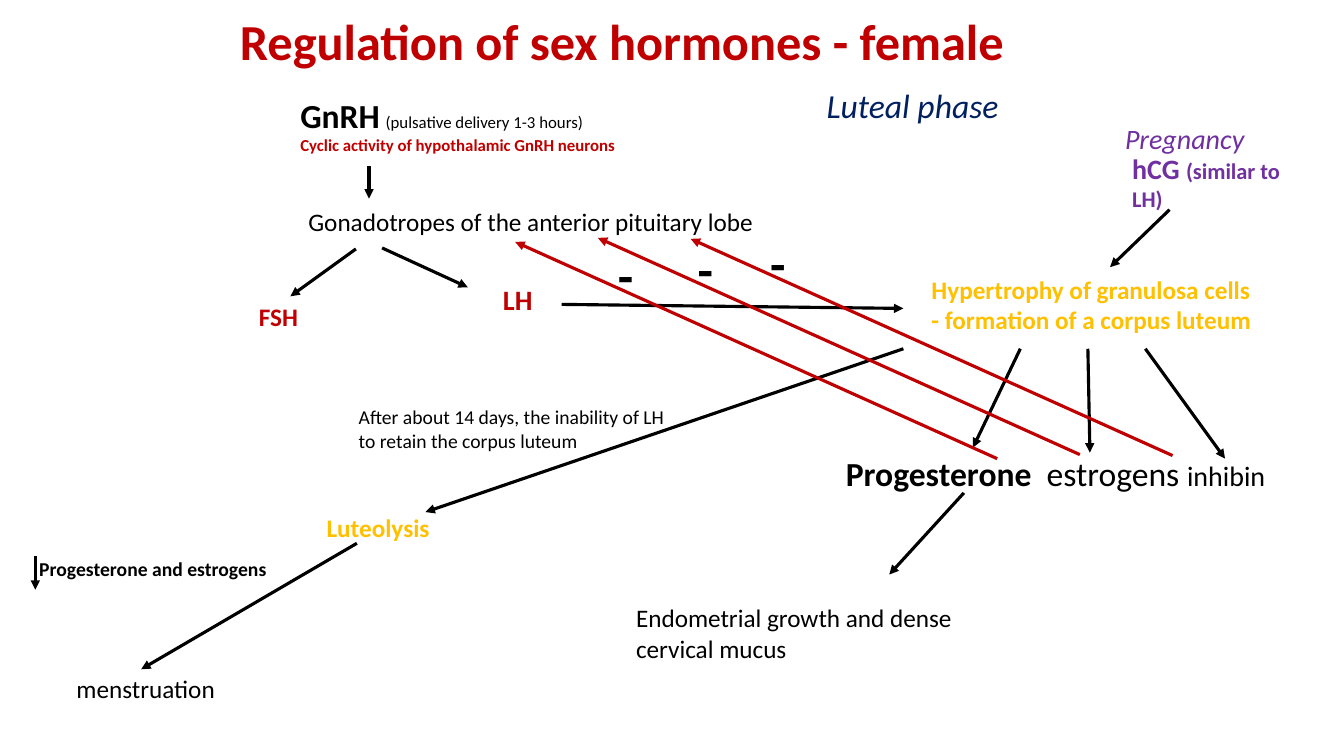
from lxml.etree import SubElement
from pptx import Presentation
from pptx.dml.color import RGBColor
from pptx.enum.shapes import MSO_CONNECTOR as Link
from pptx.enum.text import MSO_ANCHOR as Anchor
from pptx.oxml.ns import qn
from pptx.util import Inches, Pt

BLACK = RGBColor(0x00, 0x00, 0x00)
RED = RGBColor(0xC0, 0x00, 0x00)
NAVY = RGBColor(0x00, 0x20, 0x60)
GOLD = RGBColor(0xFF, 0xC0, 0x00)
PURPLE = RGBColor(0x70, 0x30, 0xA0)
FONT = "Calibri"
CELL = Inches(0.1)  # pitch of the layout grid


class Region:
    """A box on the slide, with its corner and inner places in grid cells."""

    def __init__(self, slide, left, top):
        self.shapes = slide.shapes
        self.left, self.top = left, top

    def spot(self, x, y):
        return round((self.left + x) * CELL), round((self.top + y) * CELL)

    def text(self, place, words, size=18, color=BLACK, bold=False, italic=False):
        """Add a text box; words is a string or a list of (text, size, bold)."""
        x, y, wide, high = place
        box = self.shapes.add_textbox(
            *self.spot(x, y), round(wide * CELL), round(high * CELL))
        frame = box.text_frame
        frame.word_wrap = True
        line = frame.paragraphs[0]
        style(line, words, size, color, bold, italic)
        return frame

    def arrow(self, start, end, color=BLACK):
        link = self.shapes.add_connector(
            Link.STRAIGHT, *self.spot(*start), *self.spot(*end))
        link.line.color.rgb = color
        link.line.width = Pt(2.25)
        SubElement(link.line._get_or_add_ln(), qn("a:tailEnd"), type="triangle")
        SubElement(link._element.spPr, qn("a:effectLst"))


def style(line, words, size, color, bold=False, italic=False):
    font = line.font
    font.name, font.size = FONT, Pt(size)
    font.bold, font.italic = bold, italic
    font.color.rgb = color
    if isinstance(words, str):
        words = [(words, None, None)]
    for part, points, heavy in words:
        run = line.add_run()
        run.text = part
        if points:
            run.font.size, run.font.bold = Pt(points), heavy


def add_title(slide, left, top):
    area = Region(slide, left, top)
    frame = area.text((0, 0, 110.5, 8.8), "Regulation of sex hormones - female",
                      36, RED, bold=True)
    frame.vertical_anchor = Anchor.MIDDLE
    frame.paragraphs[0].line_spacing = 0.9


def add_brain(slide, left, top):
    """GnRH and the pituitary hormones it drives."""
    area = Region(slide, left, top)
    gnrh = [("GnRH", 24, True), (" ", 18, False),
            ("(pulsative delivery 1-3 hours)", 12, False)]
    frame = area.text((4.8, 0.9, 38.4, 7.1), gnrh)
    style(frame.add_paragraph(), "Cyclic activity of hypothalamic GnRH neurons",
          12, RED, bold=True)
    area.text((5.6, 12, 48.1, 4), "Gonadotropes of the anterior pituitary lobe")
    area.text((0.7, 21.4, 13.3, 4), "FSH", 18, RED, bold=True)
    area.text((24.9, 19.5, 17.8, 4.4), "LH", 20, RED, bold=True)
    for start, end in (((12.6, 8.5), (12.6, 11.7)),
                       ((11.3, 16.7), (4.8, 21.4)),
                       ((13.9, 16.6), (22.4, 20.5)),
                       ((31.7, 22.2), (65.6, 22.6))):
        area.arrow(start, end)


def add_ovary(slide, left, top):
    """The corpus luteum, what sustains it and what it releases."""
    area = Region(slide, left, top)
    area.text((19, 0.9, 29.1, 5), "Luteal phase", 24, NAVY, italic=True)
    area.text((49.3, 7.5, 17.8, 7.1),
              [("hCG ", 20, True), ("(similar to LH)", 16, True)],
              20, PURPLE, bold=True)
    area.text((48.6, 4.6, 22, 4.4), "Pregnancy", 20, PURPLE, italic=True)
    area.text((29.4, 19.7, 34.6, 7.1),
              "Hypertrophy of granulosa cells - formation of a corpus luteum",
              18, GOLD, bold=True)
    area.text((20.9, 37.4, 46.2, 5),
              [("Progesterone  ", 24, True), ("estrogens ", 24, False),
               ("inhibin", 20, False)])
    area.text((0.1, 52.3, 33.5, 7.1),
              "Endometrial growth and dense cervical mucus")
    area.arrow((54, 13.8), (48.1, 19.5))
    for x, end in ((39.2, (34.5, 37.4)), (45.9, (46.1, 37.9)),
                   (51.6, (59.5, 38.5))):
        area.arrow((x, 27.6), end)
    area.arrow((33.6, 41.9), (26.2, 50))


def add_decline(slide, left, top):
    """Luteolysis and the menstruation that follows."""
    area = Region(slide, left, top)
    area.arrow((87.6, 0.6), (40.2, 16.8))
    area.text((32.6, 5.7, 32.6, 5.7),
              "After about 14 days, the inability of LH to retain the corpus luteum",
              14)
    area.text((29.4, 16.3, 15.9, 4), "Luteolysis", 18, GOLD, bold=True)
    area.arrow((33.4, 19.9), (12, 32.4))
    area.arrow((1.5, 21.2), (1.5, 24.5))
    area.text((0.9, 20.8, 37.1, 3.4), "Progesterone and estrogens", 14, bold=True)
    area.text((4.6, 32.3, 25.5, 4), "menstruation")


def add_feedback(slide, left, top):
    """Parallel inhibiting arrows from the ovary back to the pituitary."""
    area = Region(slide, left, top)
    for x, y in ((1.1, 2), (9.3, 1.6), (18.5, 1.7)):
        area.arrow((x + 47.8, y + 21.5), (x, y), RED)
    for x, y in ((10.3, 1.7), (18.2, 1.1), (25.4, 0.5)):
        area.text((x, y, 5.3, 7.1), "-", 36, bold=True)


def main():
    deck = Presentation()
    deck.slide_width, deck.slide_height = Inches(13.33), Inches(7.5)
    slide = deck.slides.add_slide(deck.slide_layouts[6])
    add_title(slide, 22.8, 0)
    add_brain(slide, 24, 8)
    add_ovary(slide, 62, 7)
    add_decline(slide, 2, 34)
    add_feedback(slide, 50, 22)
    deck.save("out.pptx")


if __name__ == "__main__":
    main()
